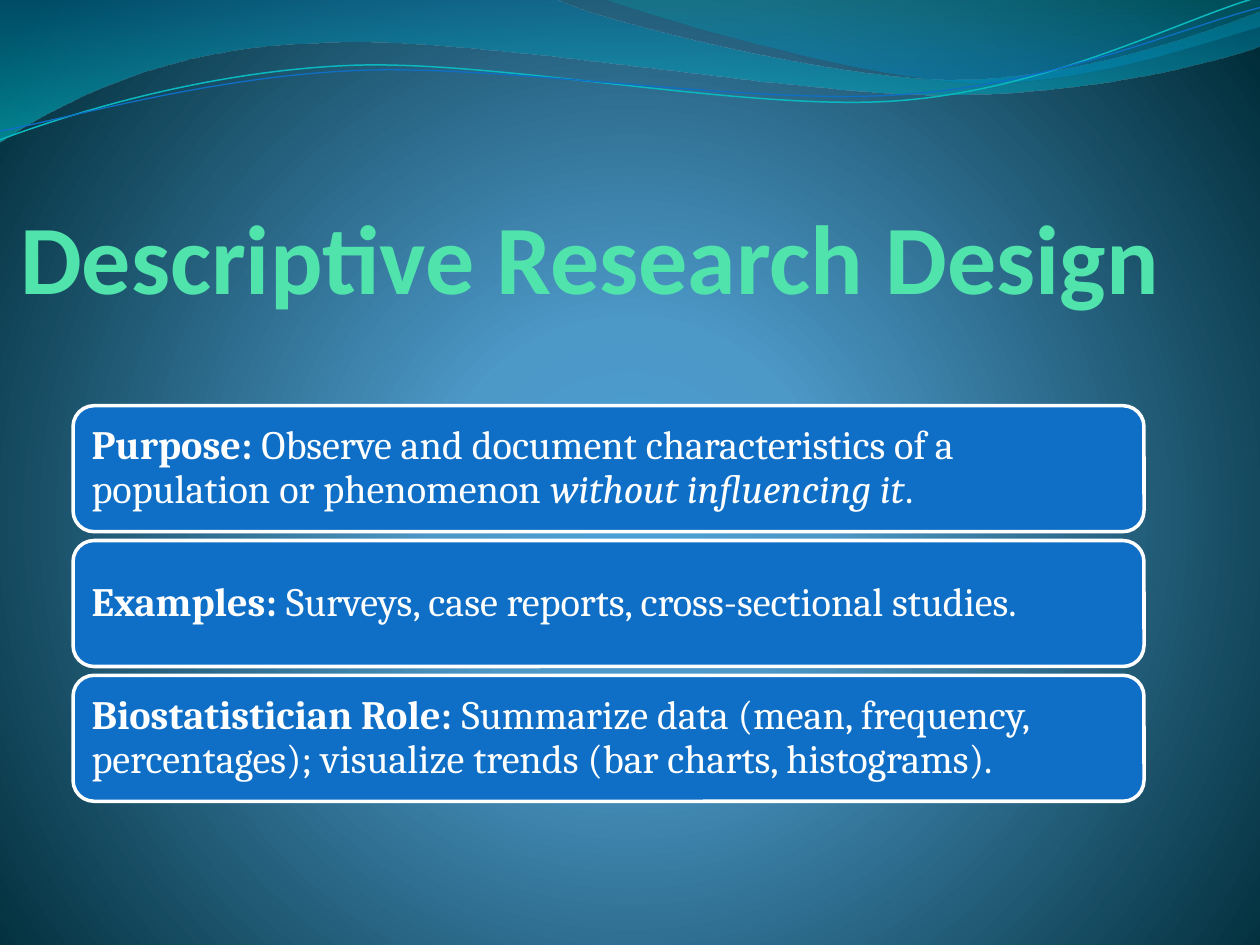
from dataclasses import dataclass
from typing import NamedTuple

from lxml import etree
from pptx import Presentation, util as u
from pptx.dml.color import RGBColor
from pptx.enum import shapes, text
from pptx.oxml import ns

WIDTH, HEIGHT = 10, 7.5


@dataclass(frozen=True)
class Theme:
    title: str = "50E3AC"
    box: str = "0F6FC6"
    light: str = "FFFFFF"
    teal: str = "0AB8BF"
    title_font: str = "Calibri"
    body_font: str = "Cambria"
    title_size: int = 56
    body_size: int = 23


class Stop(NamedTuple):
    position: int
    color: str
    opacity: int = 100


class Span(NamedTuple):
    words: str
    bold: bool = False
    italic: bool = False


@dataclass(frozen=True)
class Wave:
    """Points in inches; a step of one point is a line, of three a Bezier curve."""
    start: tuple
    steps: list
    gradient: tuple = ()
    line: str = ""
    weight: float = 0


@dataclass(frozen=True)
class Stack:
    """A column of equal rows."""
    left: float
    top: float
    width: float
    row: float
    gap: float


THEME = Theme()
STACK = Stack(left=0.58, top=3.22, width=8.5, row=1, gap=0.07)
BACKGROUND = (Stop(0, "4AA0D6"), Stop(25, "4C98C7"), Stop(100, "002C38"))

WAVES = [
    Wave((0, 0), [
        [(4.4, -0.01)],
        [(4.76, 0.17), (6.64, 0.63), (7.58, 0.63)],
        [(8.53, 0.63), (9.58, 0.26), (10, 0.09)],
        [(10.01, 0.36)],
        [(9.83, 0.44), (8.7, 0.76), (7.46, 0.75)],
        [(6.22, 0.75), (3.82, 0.28), (2.57, 0.34)],
        [(1.29, 0.36), (0.46, 0.83), (-0.01, 1.13)],
    ], gradient=(Stop(0, "0074A1", 45), Stop(100, "00C6CF", 55))),
    Wave((4.79, -0.01), [
        [(5.09, 0.11), (6.82, 0.62), (7.69, 0.65)],
        [(8.56, 0.69), (9.61, 0.32), (10, 0.21)],
        [(10, 0)],
    ], gradient=(Stop(0, "00A1A9", 30), Stop(80, "008BBF", 45))),
    Wave((0, 1.11), [
        [(0.48, 0.93), (1.58, 0.57), (2.77, 0.52)],
        [(3.95, 0.47), (5.93, 0.89), (7.13, 0.8)],
        [(8.33, 0.71), (9.38, 0.15), (9.98, -0.02)],
    ], line=THEME.teal, weight=0.85),
    Wave((0, 1.04), [
        [(0.47, 0.96), (1.64, 0.61), (2.83, 0.56)],
        [(4.03, 0.51), (5.97, 0.84), (7.17, 0.75)],
        [(8.36, 0.67), (9.41, 0.21), (10, 0.06)],
    ], line=THEME.box, weight=0.75),
]

ROWS = [
    [Span("Purpose:", bold=True),
     Span(" Observe and document characteristics of a population or phenomenon "),
     Span("without influencing it", italic=True), Span(".")],
    [Span("Examples:", bold=True),
     Span(" Surveys, case reports, cross-sectional studies.")],
    [Span("Biostatistician Role:", bold=True),
     Span(" Summarize data (mean, frequency, percentages); "
          "visualize trends (bar charts, histograms).")],
]


def rgb(color: str) -> RGBColor:
    return RGBColor.from_string(color)


def add_node(parent, tag: str, **attributes):
    names = {key: str(value) for key, value in attributes.items()}
    return etree.SubElement(parent, ns.qn(tag), names)


def apply_gradient(fill, parent, stops: tuple, radial: bool = False) -> None:
    """Replace a solid fill by a gradient whose stops may be transparent."""
    fill.solid()
    solid = parent.find(ns.qn("a:solidFill"))
    gradient = etree.Element(ns.qn("a:gradFill"), {"rotWithShape": "1"})
    stop_list = add_node(gradient, "a:gsLst")
    for stop in stops:
        node = add_node(stop_list, "a:gs", pos=stop.position * 1000)
        color = add_node(node, "a:srgbClr", val=stop.color)
        if stop.opacity < 100:
            add_node(color, "a:alpha", val=stop.opacity * 1000)
    if radial:
        circle = add_node(gradient, "a:path", path="circle")
        add_node(circle, "a:fillToRect", l=10000, t=110000, r=10000, b=100000)
    else:
        add_node(gradient, "a:lin", ang=90 * 60000, scaled=1)
    parent.replace(solid, gradient)


def paint_background(slide) -> None:
    fill = slide.background.fill
    fill.solid()
    properties = next(slide.element.iter(ns.qn("p:bgPr")))
    apply_gradient(fill, properties, BACKGROUND, radial=True)


def bend(shape, steps: list) -> None:
    """Turn each run of three line segments into one cubic curve."""
    segments = iter(list(shape.element.iter(ns.qn("a:lnTo"))))
    for step in steps:
        lines = [next(segments) for _ in step]
        if len(lines) == 3:
            curve = etree.Element(ns.qn("a:cubicBezTo"))
            lines[0].addprevious(curve)
            for line in lines:
                curve.append(line[0])
                line.getparent().remove(line)


def draw_wave(slide, wave: Wave) -> None:
    start, *points = [(u.Inches(x), u.Inches(y)) for x, y in
                      [wave.start, *(point for step in wave.steps for point in step)]]
    builder = slide.shapes.build_freeform(*start)
    builder.add_line_segments(points, close=bool(wave.gradient))
    shape = builder.convert_to_shape()
    shape.shadow.inherit = False
    bend(shape, wave.steps)
    if wave.gradient:
        apply_gradient(shape.fill, shape.element.spPr, wave.gradient)
        shape.line.fill.background()
    else:
        shape.fill.background()
        shape.line.color.rgb = rgb(wave.line)
        shape.line.width = u.Pt(wave.weight)


def place_title(slide, words: str) -> None:
    title = slide.shapes.title
    slide.shapes.element.append(title.element)  # in front of the waves
    title.left, title.top = u.Inches(0.016 * WIDTH), u.Inches(HEIGHT * 2 / 15)
    title.width, title.height = u.Inches(0.934 * WIDTH), u.Inches(1.49)
    frame = title.text_frame
    frame.text = words
    frame.vertical_anchor = text.MSO_ANCHOR.BOTTOM
    frame.margin_left = frame.margin_right = frame.margin_top = frame.margin_bottom = 0
    para = frame.paragraphs[0]
    para.alignment = text.PP_ALIGN.LEFT
    para.font.name, para.font.size = THEME.title_font, u.Pt(THEME.title_size)
    para.font.bold = True
    para.font.color.rgb = rgb(THEME.title)


def draw_row(slide, index: int, spans: list) -> None:
    top = STACK.top + index * (STACK.row + STACK.gap)
    box = slide.shapes.add_shape(
        shapes.MSO_SHAPE.ROUNDED_RECTANGLE,
        *map(u.Inches, (STACK.left, top, STACK.width, STACK.row)))
    box.shadow.inherit = False
    box.fill.solid()
    box.fill.fore_color.rgb = rgb(THEME.box)
    box.line.color.rgb = rgb(THEME.light)
    box.line.width = u.Pt(2)
    frame = box.text_frame
    frame.word_wrap = True
    frame.vertical_anchor = text.MSO_ANCHOR.MIDDLE
    frame.margin_left = frame.margin_right = u.Inches(0.1)
    para = frame.paragraphs[0]
    para.alignment = text.PP_ALIGN.LEFT
    para.line_spacing = 0.9
    para.font.name, para.font.size = THEME.body_font, u.Pt(THEME.body_size)
    para.font.color.rgb = rgb(THEME.light)
    for span in spans:
        run = para.add_run()
        run.text = span.words
        run.font.bold, run.font.italic = span.bold, span.italic


def main() -> None:
    deck = Presentation()
    deck.slide_width, deck.slide_height = u.Inches(WIDTH), u.Inches(HEIGHT)
    slide = deck.slides.add_slide(deck.slide_layouts.get_by_name("Title Only"))
    paint_background(slide)
    for wave in WAVES:
        draw_wave(slide, wave)
    place_title(slide, "Descriptive Research Design")
    for index, spans in enumerate(ROWS):
        draw_row(slide, index, spans)
    deck.save("out.pptx")


if __name__ == "__main__":
    main()
